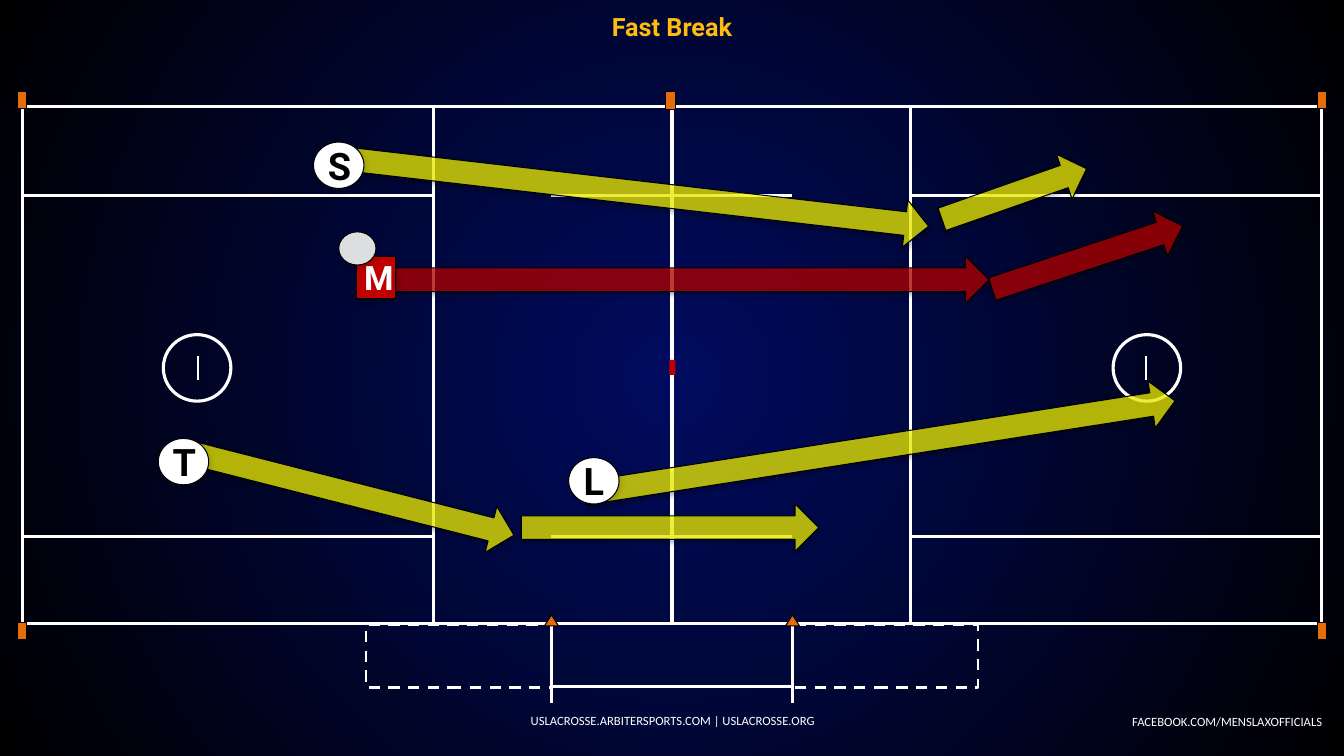
"""Build a lacrosse field diagram of officials moving on a fast break."""
from lxml import etree
from pptx import Presentation
from pptx.dml.color import RGBColor
from pptx.enum.dml import MSO_LINE
from pptx.enum.shapes import MSO_CONNECTOR, MSO_SHAPE
from pptx.enum.text import MSO_ANCHOR, MSO_AUTO_SIZE, PP_ALIGN
from pptx.oxml.ns import qn
from pptx.util import Inches, Pt

RECT, OVAL, ARROW = MSO_SHAPE.RECTANGLE, MSO_SHAPE.OVAL, MSO_SHAPE.RIGHT_ARROW
STRAIGHT, DASH = MSO_CONNECTOR.STRAIGHT, MSO_LINE.DASH
MIDDLE, GROW = MSO_ANCHOR.MIDDLE, MSO_AUTO_SIZE.SHAPE_TO_FIT_TEXT
CENTER, RIGHT = PP_ALIGN.CENTER, PP_ALIGN.RIGHT

WHITE, BLACK, ORANGE = "FFFFFF", "000000", "E46C0A"
RED, YELLOW, GOLD, GREY, NAVY = "C00000", "FFFF00", "FEBC11", "DCDEE0", "000B5F"

WIDE, HIGH = 13.33, 7.5
COLUMNS = {"end": 0.22, "goal": 1.96, "area": 4.3, "gate": 5.47, "mid": WIDE / 2}
ROWS = {"top": 1.06, "upper": 1.94, "lower": 5.32, "bottom": 6.19, "bench": 6.81, "exit": 6.97}
END, GOAL, AREA, GATE, MID = COLUMNS.values()
TOP, UPPER, LOWER, BOTTOM, BENCH, EXIT = ROWS.values()


def paint(shape, fill=None, edge=None, weight=0.75, opacity=100, shadow=None):
    """Set fill, outline and an optional (opacity, blur, distance) shadow."""
    shape.shadow.inherit = False
    properties = shape._element.spPr
    if fill:
        shape.fill.solid()
        shape.fill.fore_color.rgb = RGBColor.from_string(fill)
        if opacity < 100:
            tone = properties.find(qn("a:solidFill"))[0]
            etree.SubElement(tone, qn("a:alpha"), val=str(opacity * 1000))
    else:
        shape.fill.background()
    if edge:
        shape.line.color.rgb = RGBColor.from_string(edge)
        shape.line.width = Pt(weight)
    else:
        shape.line.fill.background()
    if shadow:
        strength, blur, distance = shadow
        cast = etree.SubElement(
            properties.find(qn("a:effectLst")), qn("a:outerShdw"), blurRad=str(Pt(blur)),
            dist=str(Pt(distance)), dir="5400000", rotWithShape="0")
        tone = etree.SubElement(cast, qn("a:srgbClr"), val=BLACK)
        etree.SubElement(tone, qn("a:alpha"), val=str(strength * 1000))


def write(box, text, size, font, colour, bold=False, align=CENTER):
    """Put one formatted paragraph into a shape."""
    frame = box.text_frame
    frame.word_wrap = True
    frame.vertical_anchor = MIDDLE
    para = frame.paragraphs[0]
    para.text = text
    para.alignment = align
    para.font.size = Pt(size)
    para.font.name = font
    para.font.bold = bold
    para.font.color.rgb = RGBColor.from_string(colour)


deck = Presentation()
deck.slide_width, deck.slide_height = Inches(WIDE), Inches(HIGH)
page = deck.slides.add_slide(deck.slide_layouts[5])
shapes = page.shapes

backdrop = page.background.fill
backdrop.gradient()
for stop, colour in zip(backdrop.gradient_stops, (NAVY, BLACK)):
    stop.color.rgb = RGBColor.from_string(colour)
gradient = page._element.find(".//" + qn("a:gradFill"))
gradient.remove(gradient.find(qn("a:lin")))
glow = etree.SubElement(gradient, qn("a:path"), path="circle")
etree.SubElement(glow, qn("a:fillToRect"), l="50000", t="50000", r="50000", b="50000")

outlines = [
    (RECT, AREA, TOP, MID - AREA, BOTTOM - TOP),
    (RECT, END, TOP, AREA - END, UPPER - TOP),
    (RECT, END, LOWER, AREA - END, BOTTOM - LOWER),
    (RECT, END, UPPER, AREA - END, LOWER - UPPER),
    (OVAL, GOAL - 0.34, 3.32, 0.67, 0.66),
]
strokes = [
    (GOAL, 3.77, GOAL, 3.53, 1.5),
    (GATE, EXIT, GATE, 6.21, 2.25),
    (MID, LOWER, GATE, LOWER, 2.25),
    (MID, UPPER, GATE, UPPER, 2.25),
    (MID, BENCH, GATE, BENCH, 2.25),
]
for mirrored in (False, True):
    for kind, left, top, width, height in outlines:
        x = WIDE - left - width if mirrored else left
        mark = shapes.add_shape(kind, Inches(x), Inches(top), Inches(width), Inches(height))
        paint(mark, edge=WHITE, weight=2.25)
    bench_left = WIDE - GATE if mirrored else GATE - 1.84
    bench = shapes.add_shape(RECT, Inches(bench_left), Inches(6.2), Inches(1.84), Inches(0.62))
    paint(bench, edge=WHITE, weight=2)
    bench.line.dash_style = DASH
    for x1, y1, x2, y2, weight in strokes:
        if mirrored:
            x1, x2 = WIDE - x1, WIDE - x2
        stroke = shapes.add_connector(STRAIGHT, Inches(x1), Inches(y1), Inches(x2), Inches(y2))
        stroke.line.color.rgb = RGBColor.from_string(WHITE)
        stroke.line.width = Pt(weight)
        etree.SubElement(stroke._element.spPr, qn("a:effectLst"))
    for top in (0.91, 6.18):
        x = WIDE - 0.26 if mirrored else 0.17
        pylon = shapes.add_shape(RECT, Inches(x), Inches(top), Inches(0.09), Inches(0.17))
        paint(pylon, ORANGE, BLACK)
    gate_x = WIDE - GATE if mirrored else GATE
    outline = shapes.build_freeform(Inches(gate_x), Inches(6.1))
    outline.add_line_segments(
        [(Inches(gate_x + 0.07), Inches(6.21)), (Inches(gate_x - 0.07), Inches(6.21))])
    paint(outline.convert_to_shape(), ORANGE, BLACK)

for left, top, width, height, fill, edge in (
        (6.6, 0.91, 0.1, 0.18, ORANGE, BLACK), (6.64, 3.57, 0.06, 0.15, RED, None)):
    mark = shapes.add_shape(RECT, Inches(left), Inches(top), Inches(width), Inches(height))
    paint(mark, fill, edge)

for left, top, length, turn, fill in (
        (5.77, 4.2, 5.92, -8.9, YELLOW),
        (5.17, 5, 2.95, 0, YELLOW),
        (9.79, 2.32, 1.99, -18.3, RED),
        (9.3, 1.69, 1.52, -19.3, YELLOW),
        (1.79, 4.66, 3.36, 14.3, YELLOW),
        (3.31, 1.67, 5.92, 6.6, YELLOW),
        (3.75, 2.54, 6.06, 0, RED)):
    run = shapes.add_shape(ARROW, Inches(left), Inches(top), Inches(length), Inches(0.47))
    run.rotation = turn
    paint(run, fill, BLACK, opacity=70, shadow=(35, 3.1, 1.8))

for letter, kind, left, top, width, height, fill, size, ink, strength in (
        ("T", OVAL, 1.57, 4.35, 0.5, 0.46, WHITE, 27, BLACK, 20),
        ("M", RECT, 3.54, 2.54, 0.38, 0.42, RED, 24, WHITE, 50),
        ("", OVAL, 3.36, 2.3, 0.37, 0.33, GREY, 0, BLACK, 20),
        ("S", OVAL, 3.11, 1.41, 0.5, 0.46, WHITE, 27, BLACK, 20),
        ("L", OVAL, 5.64, 4.54, 0.5, 0.46, WHITE, 27, BLACK, 20)):
    person = shapes.add_shape(kind, Inches(left), Inches(top), Inches(width), Inches(height))
    paint(person, fill, BLACK, shadow=(strength, 5, 2))
    if letter:
        write(person, letter, size, "Roboto", ink, True)
        frame = person.text_frame
        frame.margin_left = frame.margin_right = Inches(0.07)
        frame.margin_top = frame.margin_bottom = Inches(0.07)

title = shapes.title
title.left, title.top = Inches(0), Inches(0.05)
title.width, title.height = Inches(WIDE), Inches(0.42)
write(title, "Fast Break", 18, "Roboto", GOLD, True)

sites = shapes.add_textbox(Inches(4.56), Inches(6.95), Inches(4.22), Inches(0.4))
write(sites, "USLACROSSE.ARBITERSPORTS.COM | USLACROSSE.ORG", 9, "Calibri", WHITE)
social = shapes.add_textbox(Inches(11.09), Inches(7.03), Inches(2.12), Inches(0.25))
write(social, "FACEBOOK.COM/MENSLAXOFFICIALS", 9, "Calibri", WHITE, align=RIGHT)
social.text_frame.word_wrap = False
social.text_frame.auto_size = GROW

deck.save("out.pptx")
